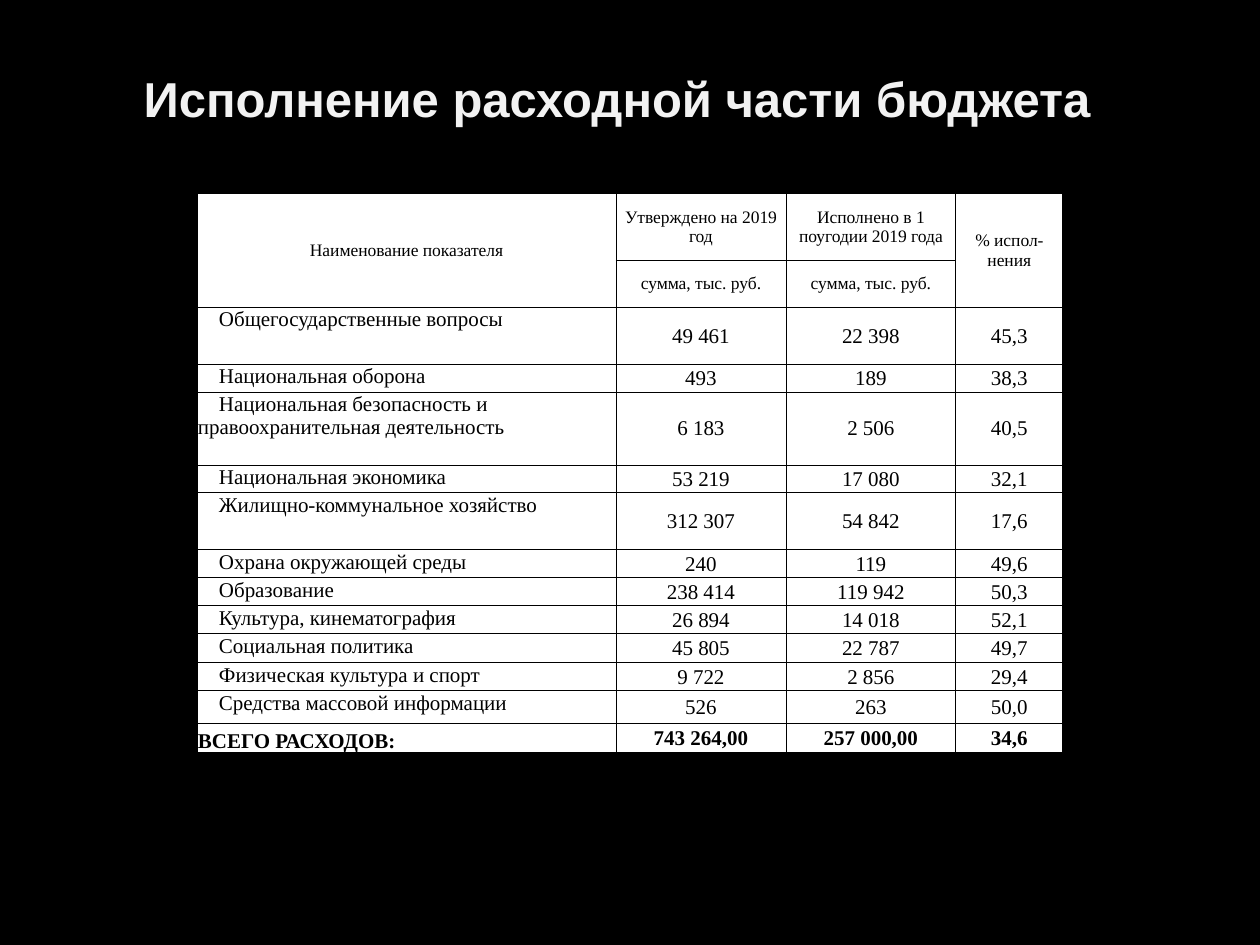
from lxml import etree
from pptx import Presentation
from pptx.dml.color import RGBColor
from pptx.enum.text import MSO_ANCHOR, PP_ALIGN
from pptx.oxml.ns import qn
from pptx.util import Pt

PX = 914400 // 126
TOP, MIDDLE, BOTTOM = MSO_ANCHOR.TOP, MSO_ANCHOR.MIDDLE, MSO_ANCHOR.BOTTOM
LEFT, CENTER = PP_ALIGN.LEFT, PP_ALIGN.CENTER
COLORS = {"background": "000000", "title": "F2F2F2", "ink": "000000", "cell": "FFFFFF"}

COLUMN_WIDTHS = [419, 170, 170, 107]
HEADER_HEIGHTS = [67, 47]
HEADINGS = [
    ["Наименование показателя", "Утверждено на 2019 год",
     "Исполнено в 1 поугодии 2019 года", "% испол-нения"],
    ["", "сумма, тыс. руб.", "сумма, тыс. руб.", ""],
]
EXPENSES = [
    (57, "Общегосударственные вопросы", "49 461", "22 398", "45,3"),
    (28, "Национальная оборона", "493", "189", "38,3"),
    (73, "Национальная безопасность и правоохранительная деятельность",
     "6 183", "2 506", "40,5"),
    (28, "Национальная экономика", "53 219", "17 080", "32,1"),
    (57, "Жилищно-коммунальное хозяйство", "312 307", "54 842", "17,6"),
    (28, "Охрана окружающей среды", "240", "119", "49,6"),
    (28, "Образование", "238 414", "119 942", "50,3"),
    (28, "Культура, кинематография", "26 894", "14 018", "52,1"),
    (29, "Социальная политика", "45 805", "22 787", "49,7"),
    (28, "Физическая культура и спорт", "9 722", "2 856", "29,4"),
    (33, "Средства массовой информации", "526", "263", "50,0"),
]
TOTAL = (29, "ВСЕГО РАСХОДОВ:", "743 264,00", "257 000,00", "34,6")


class BudgetSlide:
    title_font = "Arial"
    table_font = "Times New Roman"

    def __init__(self, presentation):
        self.slide = presentation.slides.add_slide(presentation.slide_layouts[6])
        fill = self.slide.background.fill
        fill.solid()
        fill.fore_color.rgb = RGBColor.from_string(COLORS["background"])

    def set_text(self, frame, text, font, size, color, bold, align):
        paragraph = frame.paragraphs[0]
        paragraph.text = text
        paragraph.alignment = align
        paragraph.font.name = font
        paragraph.font.size = Pt(size)
        paragraph.font.bold = bold
        paragraph.font.color.rgb = RGBColor.from_string(COLORS[color])
        return paragraph

    def title(self, text, left, top, width, height):
        box = self.slide.shapes.add_textbox(left * PX, top * PX, width * PX, height * PX)
        frame = box.text_frame
        frame.word_wrap = True
        frame.vertical_anchor = MIDDLE
        self.set_text(frame, text, self.title_font, 28, "title", True, CENTER)

    def table(self, left, top, widths, heights):
        frame = self.slide.shapes.add_table(
            len(heights), len(widths), left * PX, top * PX,
            sum(widths) * PX, sum(heights) * PX)
        table = frame.table
        table.first_row = False
        table.horz_banding = False
        for column, width in zip(table.columns, widths):
            column.width = width * PX
        for row, height in zip(table.rows, heights):
            row.height = height * PX
        return table

    def cell(self, cell, text, size, bold=False, align=CENTER, anchor=MIDDLE, indent=0):
        cell.margin_left = cell.margin_right = cell.margin_top = PX
        cell.margin_bottom = 0
        cell.vertical_anchor = anchor
        paragraph = self.set_text(
            cell.text_frame, text, self.table_font, size, "ink", bold, align)
        if indent:
            properties = paragraph._p.get_or_add_pPr()
            properties.set("marL", "0")
            properties.set("indent", str(indent * PX))
        self.borders(cell)
        cell.fill.solid()
        cell.fill.fore_color.rgb = RGBColor.from_string(COLORS["cell"])

    def borders(self, cell):
        properties = cell._tc.get_or_add_tcPr()
        for side in ("a:lnL", "a:lnR", "a:lnT", "a:lnB"):
            line = etree.SubElement(properties, qn(side), w=str(Pt(0.5)))
            fill = etree.SubElement(line, qn("a:solidFill"))
            etree.SubElement(fill, qn("a:srgbClr"), val=COLORS["ink"])


def main():
    presentation = Presentation()
    presentation.slide_width = 1260 * PX
    presentation.slide_height = 945 * PX
    budget = BudgetSlide(presentation)
    budget.title("Исполнение расходной части бюджета", 50, 37, 1134, 121)

    records = EXPENSES + [TOTAL]
    heights = HEADER_HEIGHTS + [record[0] for record in records]
    table = budget.table(197, 193, COLUMN_WIDTHS, heights)
    for row, headings in enumerate(HEADINGS):
        for column, heading in enumerate(headings):
            budget.cell(table.cell(row, column), heading, 10)
    for column in (0, 3):
        table.cell(0, column).merge(table.cell(1, column))

    for row, (_, name, *amounts) in enumerate(records, len(HEADINGS)):
        is_total = name == TOTAL[1]
        budget.cell(table.cell(row, 0), name, 12, is_total, LEFT,
                    BOTTOM if is_total else TOP, 0 if is_total else 21)
        for column, amount in enumerate(amounts, 1):
            budget.cell(table.cell(row, column), amount, 12, is_total)

    presentation.save("out.pptx")


if __name__ == "__main__":
    main()
